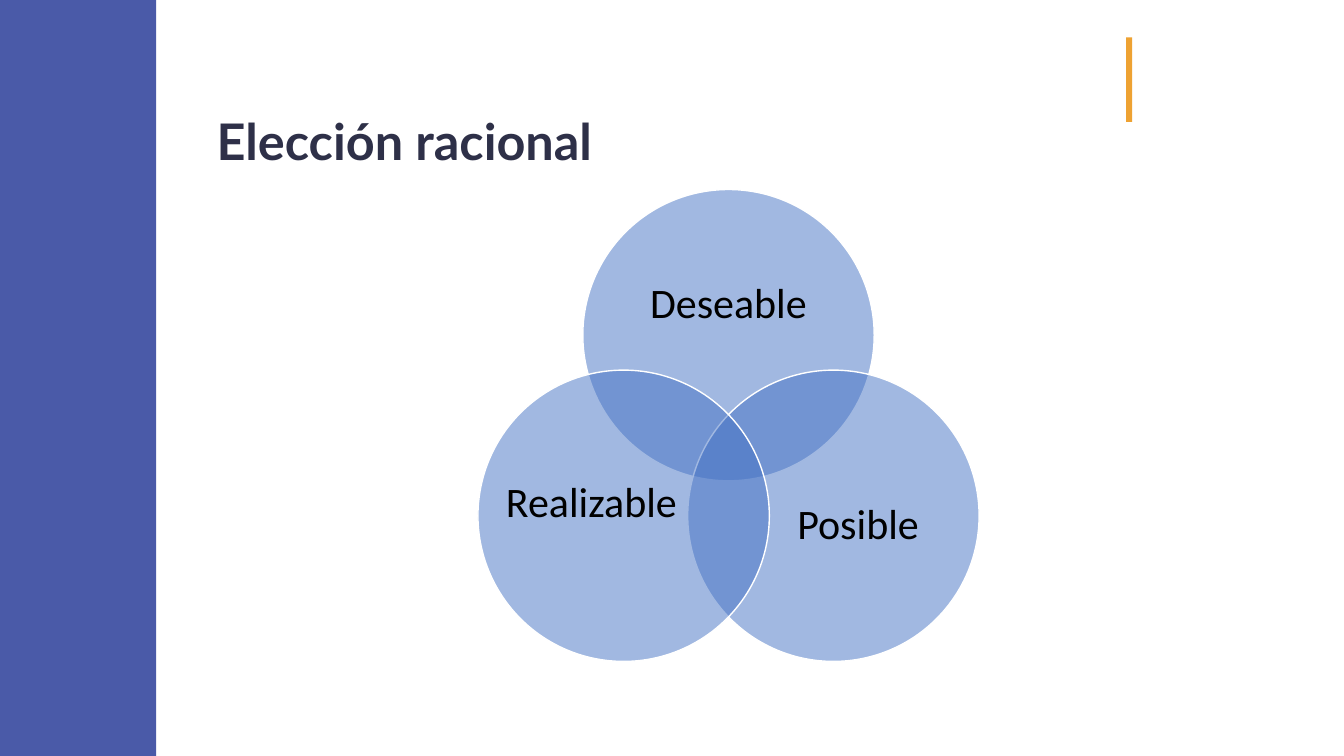
from lxml import etree
from pptx import Presentation
from pptx.dml.color import RGBColor
from pptx.enum.shapes import MSO_SHAPE
from pptx.enum.text import MSO_ANCHOR, PP_ALIGN
from pptx.oxml.ns import qn
from pptx.util import Inches, Pt

RECT, OVAL = MSO_SHAPE.RECTANGLE, MSO_SHAPE.OVAL
MIDDLE = MSO_ANCHOR.MIDDLE
LEFT, CENTER = PP_ALIGN.LEFT, PP_ALIGN.CENTER
INDIGO = RGBColor(0x4A, 0x5A, 0xA8)
AMBER = RGBColor(0xEE, 0xA2, 0x32)
NAVY = RGBColor(0x2E, 0x30, 0x48)
BLUE = RGBColor(0x44, 0x72, 0xC4)
WHITE = RGBColor(0xFF, 0xFF, 0xFF)
BLACK = RGBColor(0x00, 0x00, 0x00)
WIDE, HIGH = 13.33, 7.5

# name, circle left and top, label box, right and bottom insets: shares of the diameter
SETS = [
    ("Deseable", (0.36, 0), (0.13, 0.17, 0.74, 0.45), (0, 0)),
    ("Posible", (0.72, 0.62), (0.3, 0.26, 0.6, 0.55), (0.03, 0)),
    ("Realizable", (0, 0.62), (0.09, 0.26, 0.6, 0.55), (0, 0.15)),
]


def add_form(slide, kind, box, color):
    """Add a flat filled shape without an outline."""
    form = slide.shapes.add_shape(kind, *map(Inches, box))
    form.shadow.inherit = False
    form.fill.solid()
    form.fill.fore_color.rgb = color
    form.line.fill.background()
    return form


def add_text(slide, box, text, face, size, color, align=LEFT, bold=False):
    """Add one wrapped, vertically centred line of text and return its frame."""
    frame = slide.shapes.add_textbox(*map(Inches, box)).text_frame
    frame.word_wrap = True
    frame.vertical_anchor = MIDDLE
    frame.text = text
    para = frame.paragraphs[0]
    para.alignment = align
    para.line_spacing = 0.9
    font = para.runs[0].font
    font.name, font.size, font.bold = face, Pt(size), bold
    font.color.rgb = color
    return frame


def add_frame(slide, wide, high):
    """Draw the side band and the accent bar on the slide area."""
    add_form(slide, RECT, (0, 0, 1.55, high), INDIGO)
    add_form(slide, RECT, (wide - 2.16, 0.37, 0.06, 0.84), AMBER)


def add_venn(slide, left, top, size):
    """Draw three overlapping circles of the given diameter with labels."""
    for name, (col, row), (x, y, w, h), (right, bottom) in SETS:
        cx, cy = left + col * size, top + row * size
        disc = add_form(slide, OVAL, (cx, cy, size, size), BLUE)
        tint = disc.fill._xPr.find(qn("a:solidFill"))[0]
        etree.SubElement(tint, qn("a:alpha"), val="50000")
        disc.line.color.rgb = WHITE
        disc.line.width = Pt(1)
        box = (cx + x * size, cy + y * size, w * size, h * size)
        frame = add_text(slide, box, name, "Calibri", 30, BLACK, CENTER)
        frame.margin_left = frame.margin_top = 0
        frame.margin_right = Inches(right * size)
        frame.margin_bottom = Inches(bottom * size)


def main():
    """Build and save the slide."""
    deck = Presentation()
    deck.slide_width, deck.slide_height = Inches(WIDE), Inches(HIGH)
    slide = deck.slides.add_slide(deck.slide_layouts[6])
    add_frame(slide, WIDE, HIGH)
    add_text(slide, (2.05, 0.87, 8.95, 1.13), "Elección racional",
             "Lato", 36, NAVY, bold=True)
    add_venn(slide, 4.74, 1.88, 2.89)
    deck.save("out.pptx")


if __name__ == "__main__":
    main()
